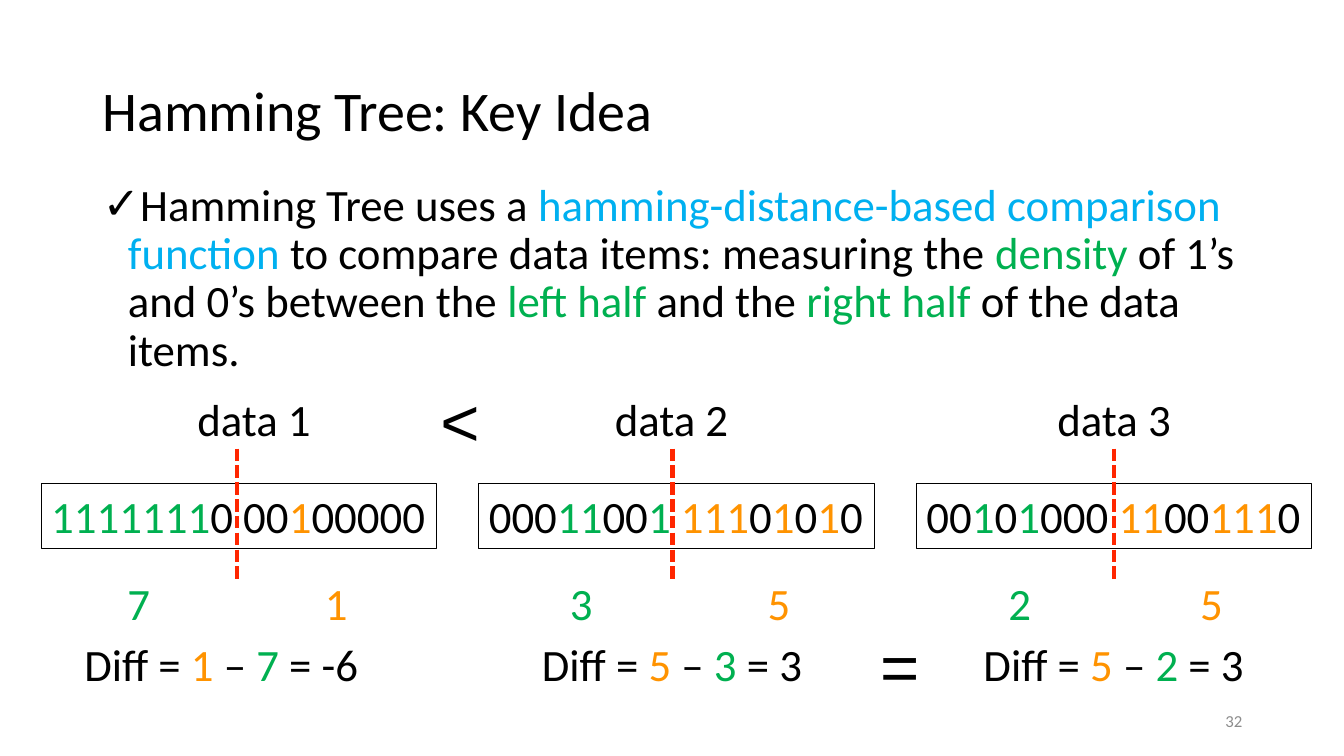
from itertools import groupby

from lxml.etree import SubElement
from pptx import Presentation
from pptx.dml.color import RGBColor
from pptx.enum.dml import MSO_LINE
from pptx.enum.shapes import MSO_CONNECTOR, MSO_SHAPE
from pptx.enum.text import MSO_ANCHOR, PP_ALIGN
from pptx.oxml.ns import qn
from pptx.util import Inches, Pt

BLACK = RGBColor(0x00, 0x00, 0x00)
GREEN = RGBColor(0x00, 0xB0, 0x50)
ORANGE = RGBColor(0xFF, 0x93, 0x00)
BLUE = RGBColor(0x00, 0xB0, 0xF0)
RED = RGBColor(0xFF, 0x26, 0x00)
GRAY = RGBColor(0x8C, 0x8C, 0x8C)

presentation = Presentation()
presentation.slide_width = Inches(13.33)
presentation.slide_height = Inches(7.5)
slide = presentation.slides.add_slide(presentation.slide_layouts[6])


def write(shape, runs, size=32, font="Calibri", align=PP_ALIGN.LEFT, anchor=MSO_ANCHOR.TOP):
    """Fill a shape with one paragraph of (text, colour) runs."""
    frame = shape.text_frame
    frame.word_wrap = True
    frame.vertical_anchor = anchor
    paragraph = frame.paragraphs[0]
    paragraph.alignment = align
    paragraph.font.size = Pt(size)
    paragraph.font.name = font
    for text, color in runs:
        run = paragraph.add_run()
        run.text = text
        run.font.color.rgb = color
    return paragraph


def add_text(left, top, width, height, runs, **style):
    box = slide.shapes.add_textbox(Inches(left), Inches(top), Inches(width), Inches(height))
    return write(box, runs, **style)


# Title
title = add_text(0.92, 0.4, 11.5, 1.45, [("Hamming Tree: Key Idea", BLACK)],
                 size=40, anchor=MSO_ANCHOR.MIDDLE)
title.line_spacing = 0.9

# Key idea with a check-mark bullet
key_idea = add_text(0.92, 1.76, 11.5, 2.08, [
    ("Hamming Tree uses a ", BLACK),
    ("hamming-distance-based comparison function", BLUE),
    (" to compare data items: measuring the ", BLACK),
    ("density", GREEN),
    (" of 1’s and 0’s between the ", BLACK),
    ("left half ", GREEN),
    ("and the ", BLACK),
    ("right half ", GREEN),
    ("of the data items.", BLACK),
])
key_idea.line_spacing = 0.9
key_idea.space_before = Pt(10)
bullet_properties = key_idea._p.get_or_add_pPr()
bullet_properties.set("marL", str(Inches(0.25)))
bullet_properties.set("indent", str(-Inches(0.25)))
SubElement(bullet_properties, qn("a:buFont")).set("typeface", "Arial")
SubElement(bullet_properties, qn("a:buChar")).set("char", "✓")
# Paragraph defaults come after the bullet in the schema
bullet_properties.append(bullet_properties.find(qn("a:defRPr")))

# Data items: left half, right half, result, then the left edges of
# the bit box, label, left count, right count and diff, and the divider's x
data_items = [
    ("11111110", "00100000", " = -6 ", 0.41, 1.71, 1.13, 3.09, 0.66, 2.35),
    ("00011001", "11101010", " = 3", 4.75, 5.85, 5.52, 7.48, 5.08, 6.67),
    ("00101000", "11001110", " = 3 ", 9.09, 10.24, 9.87, 11.77, 9.51, 11.05),
]
for number, item in enumerate(data_items, start=1):
    (left_half, right_half, result,
     bits_x, label_x, left_count_x, right_count_x, diff_x, divider_x) = item
    left_count = str(left_half.count("1"))
    right_count = str(right_half.count("1"))

    # Bit string with the ones of each half coloured
    bits = slide.shapes.add_shape(MSO_SHAPE.RECTANGLE, Inches(bits_x), Inches(4.8),
                                  Inches(3.92), Inches(0.64))
    bits.shadow.inherit = False
    bits.fill.background()
    bits.line.color.rgb = BLACK
    bits.line.width = Pt(0.75)
    bit_runs = []
    for half, one_color in ((left_half + " ", GREEN), (right_half, ORANGE)):
        for is_one, group in groupby(half, key=lambda bit: bit == "1"):
            bit_runs.append(("".join(group), one_color if is_one else BLACK))
    write(bits, bit_runs)

    # Divider between the halves
    divider = slide.shapes.add_connector(MSO_CONNECTOR.STRAIGHT, Inches(divider_x), Inches(4.45),
                                         Inches(divider_x), Inches(5.78))
    divider.line.color.rgb = RED
    divider.line.width = Pt(3)
    divider.line.dash_style = MSO_LINE.SQUARE_DOT
    SubElement(divider._element.spPr, qn("a:effectLst"))

    # Label, counts of ones and their difference
    diff_runs = [("Diff = ", BLACK), (right_count, ORANGE), (" – ", BLACK),
                 (left_count, GREEN), (result, BLACK)]
    for left, top, width, runs in (
        (label_x, 3.84, 1.62, [(f"data {number}", BLACK)]),
        (left_count_x, 5.66, 0.49, [(left_count, GREEN)]),
        (right_count_x, 5.66, 0.49, [(right_count, ORANGE)]),
        (diff_x, 6.27, 3.17, diff_runs),
    ):
        add_text(left, top, width, 0.64, runs, align=PP_ALIGN.CENTER)

# Comparison signs between neighbouring items
for sign, left, top in (("<", 4.27, 3.71), ("=", 8.63, 6.14)):
    add_text(left, top, 0.49, 0.91, [(sign, BLACK)], size=48, font="Arial")

# Slide number
add_text(9.42, 6.95, 3, 0.4, [("32", GRAY)], size=12,
         align=PP_ALIGN.RIGHT, anchor=MSO_ANCHOR.MIDDLE)

presentation.save("out.pptx")
